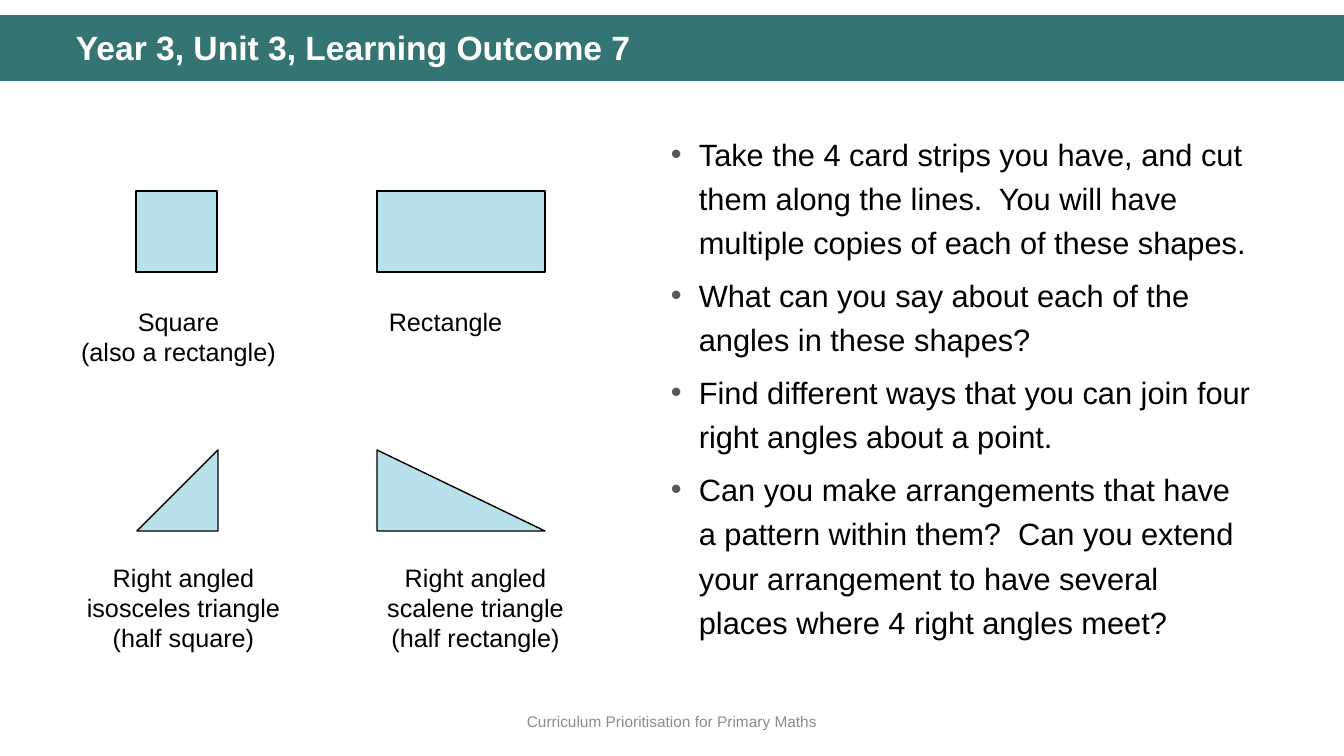
from dataclasses import dataclass

from lxml.etree import SubElement
from pptx import Presentation
from pptx.dml.color import RGBColor
from pptx.enum.shapes import MSO_SHAPE
from pptx.enum.text import MSO_ANCHOR, PP_ALIGN
from pptx.oxml.ns import qn
from pptx.util import Inches, Pt


@dataclass(frozen=True)
class Theme:
    font: str = "Arial"
    band: str = "347574"
    shape: str = "B8E1EC"
    ink: str = "000000"
    white: str = "FFFFFF"
    footer: str = "8C8C8C"
    bullet: str = "585858"
    title_size: int = 24
    body_size: int = 22
    label_size: int = 18
    footer_size: int = 11


def px(n):
    return Inches(n / 100.8)


class Deck:
    """Draws styled elements on the current slide, with lengths in px."""

    def __init__(self, theme):
        self.theme = theme
        self.prs = Presentation()
        self.prs.slide_width, self.prs.slide_height = px(1344), px(756)
        self.s = None

    def add_slide(self):
        self.s = self.prs.slides.add_slide(self.prs.slide_layouts[6])

    def shape(self, kind, x, y, w, h, fill, outlined=True):
        sp = self.s.shapes.add_shape(kind, px(x), px(y), px(w), px(h))
        sp.shadow.inherit = False
        sp.fill.solid()
        sp.fill.fore_color.rgb = RGBColor.from_string(fill)
        if outlined:
            sp.line.color.rgb = RGBColor.from_string(self.theme.ink)
            sp.line.width = Pt(1)
        else:
            sp.line.fill.background()
        return sp

    def flip(self, sp):
        sp._element.spPr.find(qn("a:xfrm")).set("flipH", "1")

    def text(self, x, y, w, h, lines, size, color, align=PP_ALIGN.LEFT,
             bold=False, spacing=None, anchor=MSO_ANCHOR.TOP, wrap=True):
        sp = self.s.shapes.add_textbox(px(x), px(y), px(w), px(h))
        tf = sp.text_frame
        tf.word_wrap = wrap
        tf.vertical_anchor = anchor
        tf.text = "\n".join(lines)
        for p in tf.paragraphs:
            p.alignment = align
            if spacing:
                p.line_spacing = spacing
            for r in p.runs:
                r.font.name = self.theme.font
                r.font.size = Pt(size)
                r.font.bold = bold
                r.font.color.rgb = RGBColor.from_string(color)
        return tf

    def label(self, x, y, w, h, lines, wrap=True):
        self.text(x, y, w, h, lines, self.theme.label_size, self.theme.ink,
                  align=PP_ALIGN.CENTER, wrap=wrap)

    def bullets(self, x, y, w, h, lines):
        tf = self.text(x, y, w, h, lines, self.theme.body_size,
                       self.theme.ink, spacing=1.2)
        for i, p in enumerate(tf.paragraphs):
            p.space_before = Pt(6 if i else 0)
            pPr = p._p.get_or_add_pPr()
            pPr.set("marL", str(px(28)))
            pPr.set("indent", str(-px(28)))
            clr = SubElement(pPr, qn("a:buClr"))
            SubElement(clr, qn("a:srgbClr"), val=self.theme.bullet)
            SubElement(pPr, qn("a:buFont"), typeface=self.theme.font)
            SubElement(pPr, qn("a:buChar"), char="•")


def main():
    t = Theme()
    deck = Deck(t)
    deck.add_slide()

    deck.shape(MSO_SHAPE.RECTANGLE, 0, 15, 1344, 66, t.band, outlined=False)
    deck.text(0, 701, 1344, 40, ["Curriculum Prioritisation for Primary Maths"],
              t.footer_size, t.footer, align=PP_ALIGN.CENTER,
              anchor=MSO_ANCHOR.MIDDLE)
    deck.text(66, 27, 1242, 47, ["Year 3, Unit 3, Learning Outcome 7"],
              t.title_size, t.white, bold=True, spacing=0.9)

    side, length = 81, 168
    left, right = 136, 377
    top, bottom = 191, 450
    deck.shape(MSO_SHAPE.RECTANGLE, left, top, side, side, t.shape)
    deck.shape(MSO_SHAPE.RECTANGLE, right, top, length, side, t.shape)
    deck.flip(deck.shape(MSO_SHAPE.RIGHT_TRIANGLE, left + 1, bottom, side, side,
                         t.shape))
    deck.shape(MSO_SHAPE.RIGHT_TRIANGLE, right, bottom, length, side, t.shape)

    deck.label(70, 301, 217, 72, ["Square", "(also a rectangle)"], wrap=False)
    deck.label(378, 301, 135, 40, ["Rectangle"], wrap=False)
    deck.label(60, 557, 247, 102,
               ["Right angled isosceles triangle", "(half square)"])
    deck.label(367, 557, 217, 102,
               ["Right angled scalene triangle", "(half rectangle)"])

    deck.bullets(661, 123, 601, 582, [
        "Take the 4 card strips you have, and cut them along the lines.  "
        "You will have multiple copies of each of these shapes.",
        "What can you say about each of the angles in these shapes?",
        "Find different ways that you can join four right angles about a point.",
        "Can you make arrangements that have a pattern within them?  "
        "Can you extend your arrangement to have several places where "
        "4 right angles meet?",
    ])

    deck.prs.save("out.pptx")


if __name__ == "__main__":
    main()
